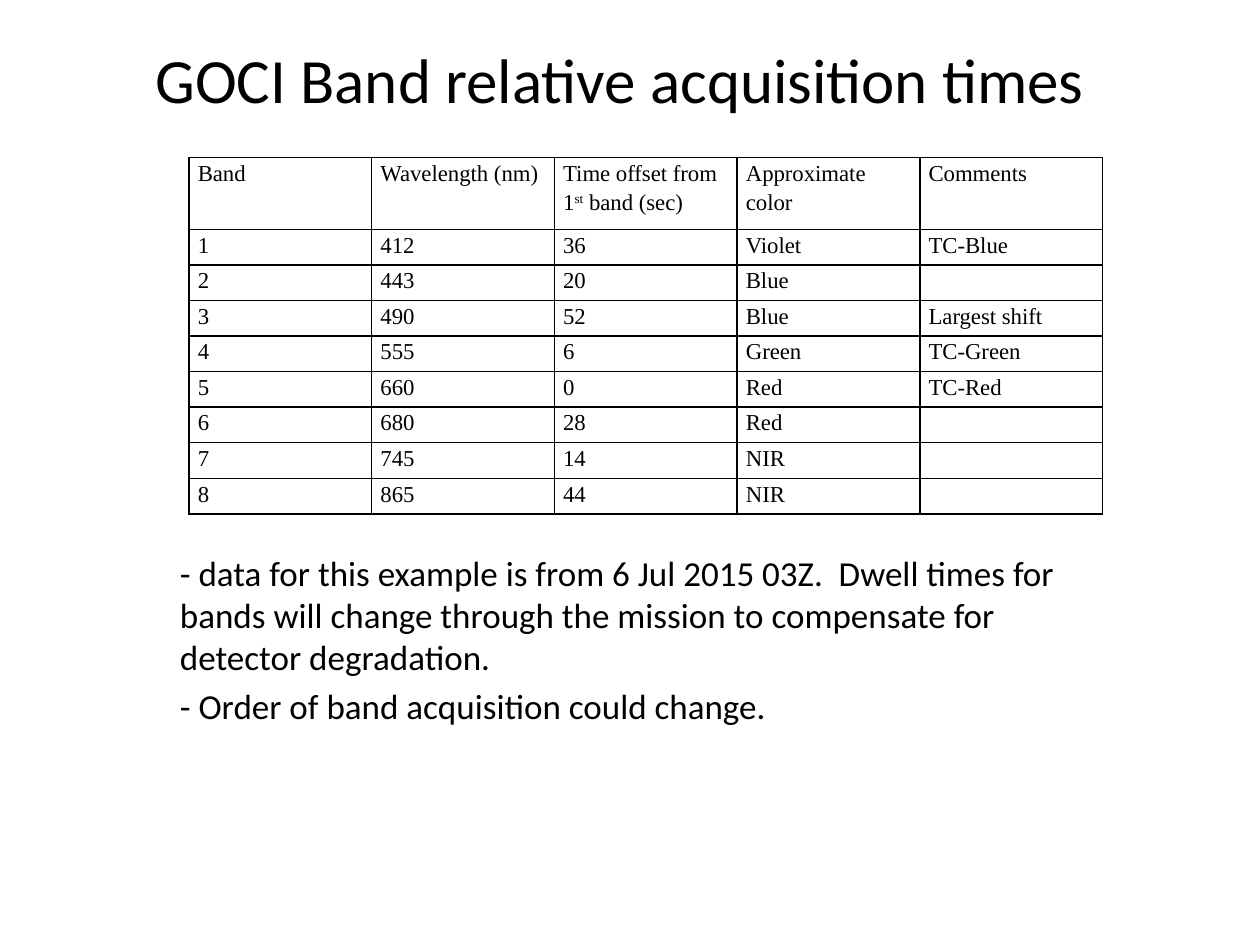
from lxml import etree
from pptx import Presentation
from pptx.dml.color import RGBColor
from pptx.enum.text import MSO_ANCHOR, PP_ALIGN
from pptx.oxml.ns import qn
from pptx.util import Inches, Pt

BLACK = RGBColor(0, 0, 0)
CENTER, LEFT = PP_ALIGN.CENTER, PP_ALIGN.LEFT
MIDDLE, TOP = MSO_ANCHOR.MIDDLE, MSO_ANCHOR.TOP
BODY_FONT, TABLE_FONT = "Calibri", "Times New Roman"
TABLE_SIZE = 13

TITLE = "GOCI Band relative acquisition times"
NOTES = [
    "- data for this example is from 6 Jul 2015 03Z.  Dwell times for bands "
    "will change through the mission to compensate for detector degradation.",
    "- Order of band acquisition could change.",
]
# A cell given as a tuple alternates normal and superscript text
BANDS = [
    ("Band", "Wavelength (nm)", ("Time offset from 1", "st", " band (sec)"),
     "Approximate color", "Comments"),
    ("1", "412", "36", "Violet", "TC-Blue"),
    ("2", "443", "20", "Blue", ""),
    ("3", "490", "52", "Blue", "Largest shift"),
    ("4", "555", "6", "Green", "TC-Green"),
    ("5", "660", "0", "Red", "TC-Red"),
    ("6", "680", "28", "Red", ""),
    ("7", "745", "14", "NIR", ""),
    ("8", "865", "44", "NIR", ""),
]
TABLE_WIDTH, TABLE_HEIGHT, HEADER_HEIGHT = 7.25, 2.83, 0.57


def set_font(paragraph, name, size):
    font = paragraph.font
    font.name, font.size, font.color.rgb = name, Pt(size), BLACK


def add_text(slide, box, lines, size, align=LEFT, anchor=TOP):
    frame = slide.shapes.add_textbox(*map(Inches, box)).text_frame
    frame.word_wrap = True
    frame.vertical_anchor = anchor
    for i, line in enumerate(lines):
        paragraph = frame.add_paragraph() if i else frame.paragraphs[0]
        paragraph.text = line
        paragraph.alignment = align
        if i:
            paragraph.space_before = Pt(size * 0.2)
        set_font(paragraph, BODY_FONT, size)


def add_borders(cell):
    properties = cell._tc.get_or_add_tcPr()
    for position, side in enumerate(("lnL", "lnR", "lnT", "lnB")):
        line = etree.Element(qn(f"a:{side}"), w=str(Pt(1)))
        fill = etree.SubElement(line, qn("a:solidFill"))
        etree.SubElement(fill, qn("a:srgbClr"), val=str(BLACK))
        properties.insert(position, line)


def fill_cell(cell, content):
    cell.margin_left = cell.margin_right = Inches(0.07)
    cell.margin_top = cell.margin_bottom = 0
    cell.fill.background()
    add_borders(cell)
    paragraph = cell.text_frame.paragraphs[0]
    paragraph.line_spacing = 1.15
    set_font(paragraph, TABLE_FONT, TABLE_SIZE)
    if not content:
        # Keeps an empty cell from stretching its row
        paragraph._p.get_or_add_endParaRPr().set("sz", str(TABLE_SIZE * 100))
        return
    parts = content if isinstance(content, tuple) else (content,)
    for i, part in enumerate(parts):
        run = paragraph.add_run()
        run.text = part
        if i % 2:
            run.font._element.set("baseline", "30000")


def add_band_table(slide, left, top):
    rows, columns = len(BANDS), len(BANDS[0])
    table = slide.shapes.add_table(
        rows, columns, Inches(left), Inches(top),
        Inches(TABLE_WIDTH), Inches(TABLE_HEIGHT)).table
    table.first_row = table.horz_banding = False
    band_height = (TABLE_HEIGHT - HEADER_HEIGHT) / (rows - 1)
    for column in table.columns:
        column.width = Inches(TABLE_WIDTH / columns)
    for r, band in enumerate(BANDS):
        table.rows[r].height = Inches(band_height if r else HEADER_HEIGHT)
        for c, content in enumerate(band):
            fill_cell(table.cell(r, c), content)


def main():
    deck = Presentation()
    deck.slide_width, deck.slide_height = Inches(10), Inches(7.5)
    slide = deck.slides.add_slide(deck.slide_layouts[6])

    # Title
    add_text(slide, (0.67, 0.25, 8.5, 0.75), [TITLE], 36, CENTER, MIDDLE)
    # Remarks below the table
    add_text(slide, (1.33, 4.33, 7.33, 2), NOTES, 20)
    # Band acquisition times
    add_band_table(slide, 1.5, 1.25)

    deck.save("out.pptx")


if __name__ == "__main__":
    main()
